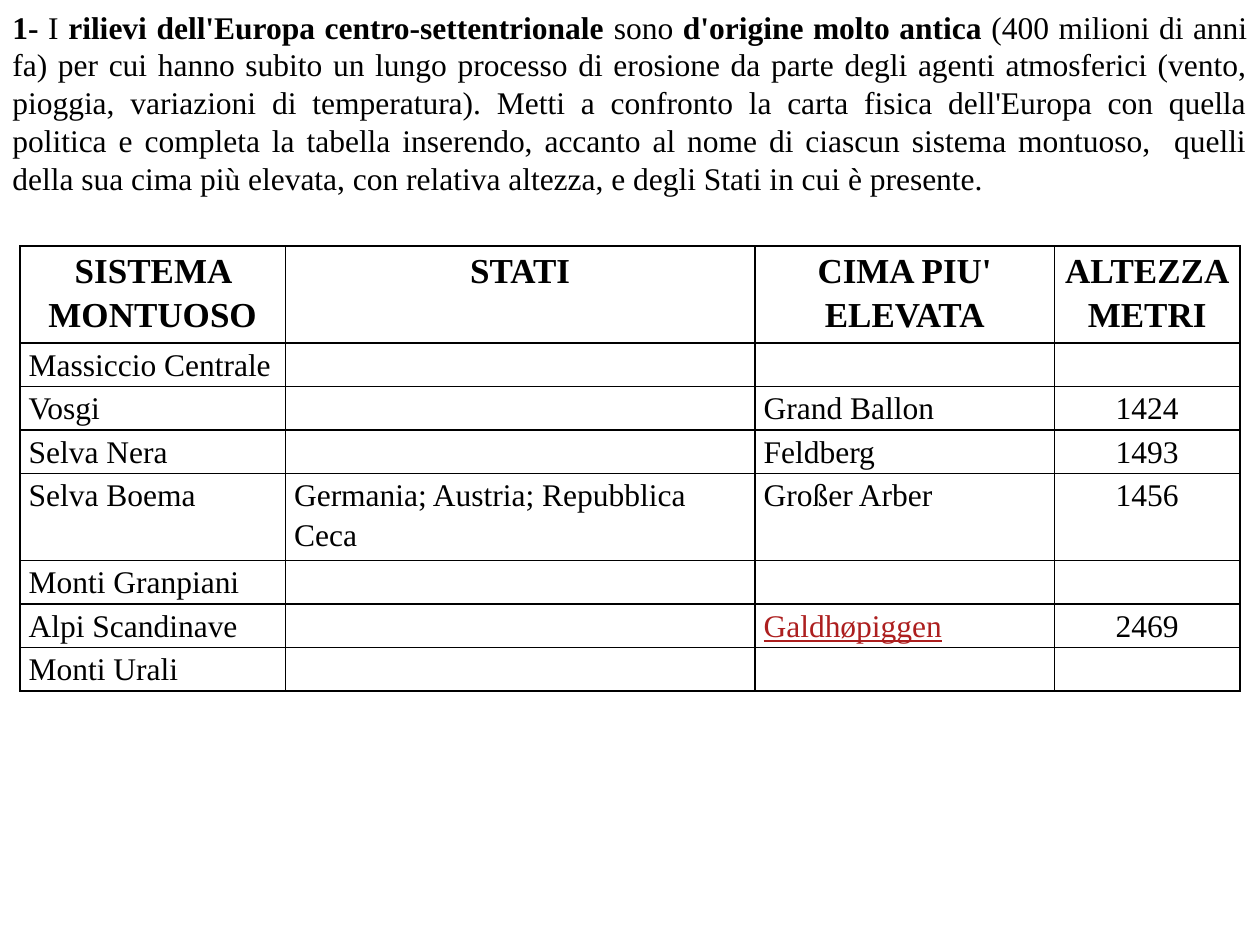
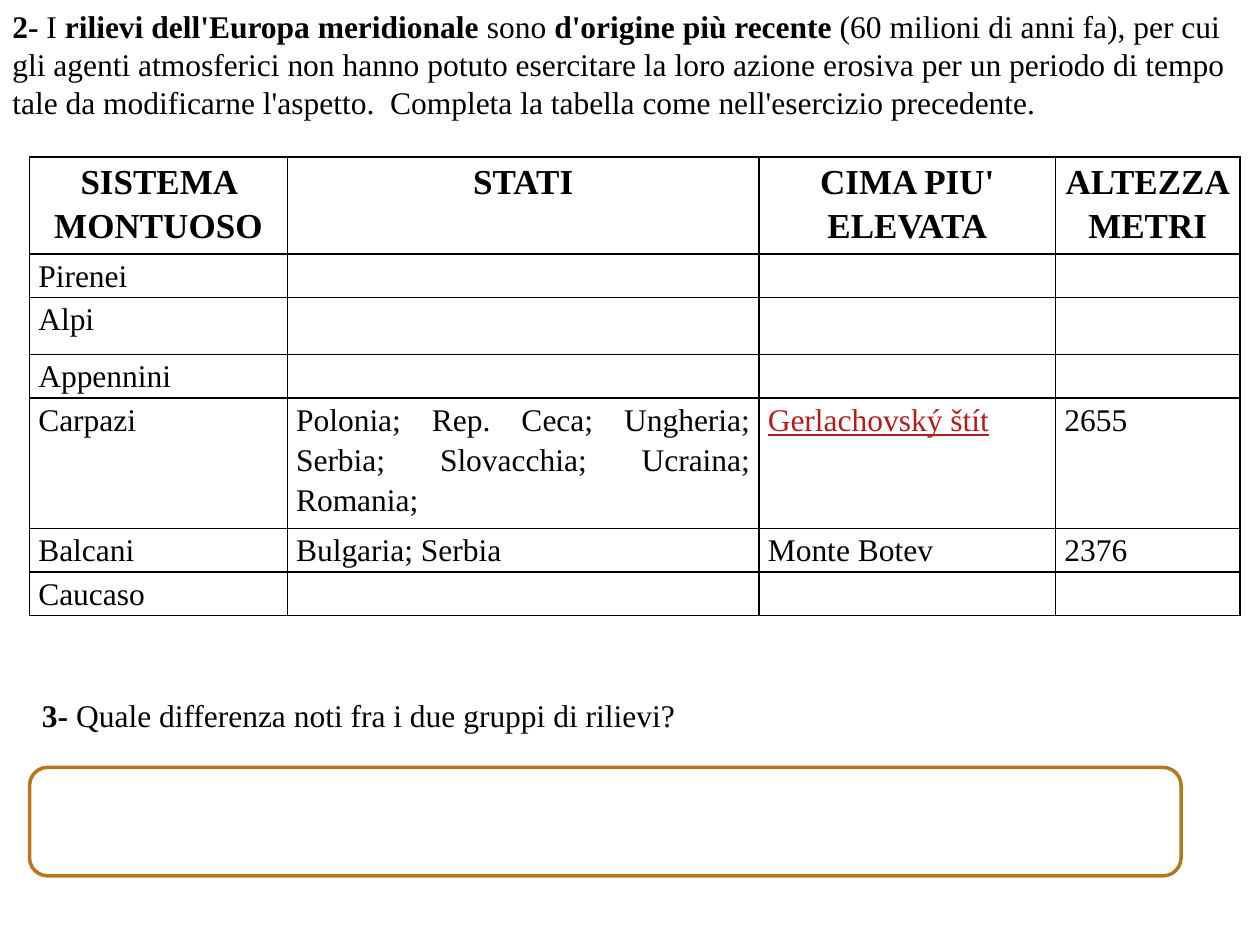
from dataclasses import dataclass

from lxml import etree
from pptx import Presentation
from pptx.dml.color import RGBColor
from pptx.enum.shapes import MSO_SHAPE
from pptx.enum.text import MSO_ANCHOR, PP_ALIGN
from pptx.oxml.ns import qn
from pptx.util import Pt

LEFT, CENTER, JUSTIFY = PP_ALIGN.LEFT, PP_ALIGN.CENTER, PP_ALIGN.JUSTIFY
MIDDLE = MSO_ANCHOR.MIDDLE
ROUNDED = MSO_SHAPE.ROUNDED_RECTANGLE

FONT = "Times New Roman"
BLACK, WHITE, LINK_RED, OCHRE = "000000", "FFFFFF", "AD1F1F", "B27822"
BODY_SIZE, HEADER_SIZE = 18, 20
CELL_SPACING = 1.15
CELL_MARGIN = 5
HEADER_HEIGHT, ROW_HEIGHT = 55.4, 24.9
BLANK_LAYOUT = 6
BORDER_TAGS = ("a:lnL", "a:lnR", "a:lnT", "a:lnB")
HEADERS = ("SISTEMA\u0020MONTUOSO", "STATI", "CIMA PIU' ELEVATA", "ALTEZZA\nMETRI")


@dataclass(frozen=True)
class Box:
    left: float
    top: float
    width: float
    height: float

    def lengths(self):
        return Pt(self.left), Pt(self.top), Pt(self.width), Pt(self.height)


@dataclass(frozen=True)
class MountainRange:
    name: str
    states: str = ""
    peak: str = ""
    metres: str = ""
    height: float = ROW_HEIGHT
    linked_peak: bool = False


@dataclass(frozen=True)
class RangeTable:
    left: float
    top: float
    column_widths: tuple[float, ...]
    alignments: tuple[PP_ALIGN, ...]
    ranges: tuple[MountainRange, ...]


NORTHERN_TABLE = RangeTable(
    11.4, 140.5, (151.7, 268.3, 171.2, 106), (JUSTIFY, LEFT, JUSTIFY, CENTER),
    (
        MountainRange("Massiccio Centrale"),
        MountainRange("Vosgi", peak="Grand Ballon", metres="1424"),
        MountainRange("Selva Nera", peak="Feldberg", metres="1493"),
        MountainRange("Selva Boema", "Germania; Austria; Repubblica Ceca",
                      "Großer Arber", "1456", height=49.7),
        MountainRange("Monti Granpiani"),
        MountainRange("Alpi Scandinave", peak="Galdhøpiggen", metres="2469",
                      linked_peak=True),
        MountainRange("Monti Urali"),
    ),
)
SOUTHERN_TABLE = RangeTable(
    16.9, 89.8, (147.3, 269.6, 169.5, 105.2), (JUSTIFY,) * 4,
    (
        MountainRange("Pirenei"),
        MountainRange("Alpi", height=32.5),
        MountainRange("Appennini"),
        MountainRange("Carpazi",
                      "Polonia; Rep. Ceca; Ungheria; Serbia; Slovacchia; Ucraina; Romania;",
                      "Gerlachovský štít", "2655", height=74.3, linked_peak=True),
        MountainRange("Balcani", "Bulgaria; Serbia", "Monte Botev", "2376"),
        MountainRange("Caucaso"),
    ),
)

NORTHERN_TASK = (
    "**1- **I **rilievi dell'Europa centro-settentrionale **sono **d'origine molto antica** "
    "(400 milioni di anni fa) per cui hanno subito un lungo processo di erosione da parte "
    "degli agenti atmosferici (vento, pioggia, variazioni di temperatura). Metti a confronto "
    "la carta fisica dell'Europa con quella politica e completa la tabella inserendo, accanto "
    "al nome di ciascun sistema montuoso,  quelli della sua cima più elevata, con relativa "
    "altezza, e degli Stati in cui è presente."
)
SOUTHERN_TASK = (
    "**2- **I **rilievi dell'Europa meridionale **sono **d'origine più recente** (60 milioni "
    "di anni fa), per cui gli agenti atmosferici non hanno potuto esercitare la loro azione "
    "erosiva per un periodo di tempo tale da modificarne l'aspetto.  Completa la tabella come "
    "nell'esercizio precedente."
)
QUESTION = "**3- **Quale differenza noti fra i due gruppi di rilievi?"


def color(value: str) -> RGBColor:
    return RGBColor.from_string(value)


def write_text(text_frame, text: str, *, size: float = BODY_SIZE, align=LEFT,
               text_color: str = BLACK, underline: bool = False, spacing: float = 1.0) -> None:
    """Write one paragraph per line; parts between ** marks are bold."""
    for index, line in enumerate(text.split("\n")):
        paragraph = text_frame.add_paragraph() if index else text_frame.paragraphs[0]
        paragraph.alignment = align
        paragraph.line_spacing = spacing
        for part_index, part in enumerate(line.split("**")):
            if not part:
                continue
            run = paragraph.add_run()
            run.text = part
            run.font.name = FONT
            run.font.size = Pt(size)
            run.font.bold = part_index % 2 == 1
            run.font.underline = underline
            run.font.color.rgb = color(text_color)


def add_text(slide, box: Box, text: str, align=LEFT) -> None:
    text_frame = slide.shapes.add_textbox(*box.lengths()).text_frame
    text_frame.word_wrap = True
    text_frame.vertical_anchor = MIDDLE
    write_text(text_frame, text, align=align)


def format_cell(cell) -> None:
    cell.margin_left = cell.margin_right = Pt(CELL_MARGIN)
    cell.margin_top = cell.margin_bottom = Pt(0)
    properties = cell._tc.get_or_add_tcPr()
    for tag in BORDER_TAGS:
        border = etree.SubElement(properties, qn(tag), w=str(Pt(1)))
        fill = etree.SubElement(border, qn("a:solidFill"))
        etree.SubElement(fill, qn("a:srgbClr"), val=BLACK)
    cell.fill.solid()
    cell.fill.fore_color.rgb = color(WHITE)


def add_range_table(slide, layout: RangeTable) -> None:
    heights = [HEADER_HEIGHT] + [item.height for item in layout.ranges]
    box = Box(layout.left, layout.top, sum(layout.column_widths), sum(heights))
    table = slide.shapes.add_table(len(heights), len(HEADERS), *box.lengths()).table
    table.first_row = table.horz_banding = False
    for column, width in zip(table.columns, layout.column_widths):
        column.width = Pt(width)
    for row, height in zip(table.rows, heights):
        row.height = Pt(height)
    for cell in table.iter_cells():
        format_cell(cell)

    for cell, header in zip(table.rows[0].cells, HEADERS):
        bold_header = "\n".join(f"**{line}**" for line in header.split("\n"))
        write_text(cell.text_frame, bold_header, size=HEADER_SIZE, align=CENTER,
                   spacing=CELL_SPACING)
    for row_index, item in enumerate(layout.ranges, start=1):
        values = (item.name, item.states, item.peak, item.metres)
        for column_index, (value, align) in enumerate(zip(values, layout.alignments)):
            if not value:
                continue
            linked = item.linked_peak and column_index == 2
            write_text(table.cell(row_index, column_index).text_frame, value, align=align,
                       text_color=LINK_RED if linked else BLACK, underline=linked,
                       spacing=CELL_SPACING)


def add_answer_box(slide, box: Box) -> None:
    shape = slide.shapes.add_shape(ROUNDED, *box.lengths())
    shape.shadow.inherit = False
    shape.fill.solid()
    shape.fill.fore_color.rgb = color(WHITE)
    shape.line.color.rgb = color(OCHRE)
    shape.line.width = Pt(2)


def add_exercise(presentation, task: str, task_height: float, align, layout: RangeTable):
    slide = presentation.slides.add_slide(presentation.slide_layouts[BLANK_LAYOUT])
    slide.background.fill.solid()
    slide.background.fill.fore_color.rgb = color(WHITE)
    add_text(slide, Box(0, 0, 720, task_height), task, align)
    add_range_table(slide, layout)
    return slide


def main() -> None:
    presentation = Presentation()
    presentation.slide_width, presentation.slide_height = Pt(720), Pt(540)
    add_exercise(presentation, NORTHERN_TASK, 116.6, JUSTIFY, NORTHERN_TABLE)
    slide = add_exercise(presentation, SOUTHERN_TASK, 72.7, LEFT, SOUTHERN_TABLE)
    add_text(slide, Box(16.9, 394, 624, 29), QUESTION)
    add_answer_box(slide, Box(16.9, 438.5, 658, 62))
    presentation.save("out.pptx")


if __name__ == "__main__":
    main()
